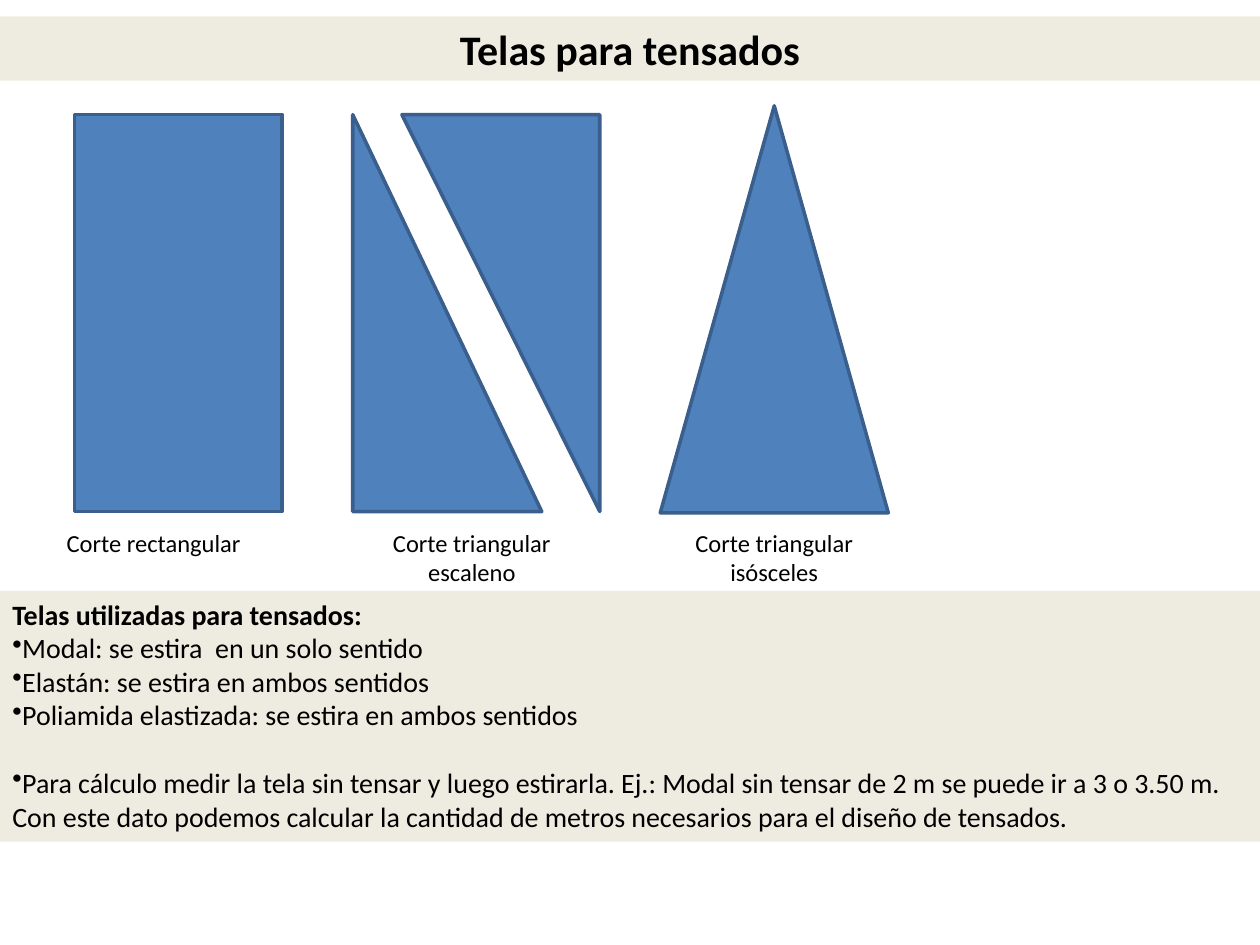
from pptx import Presentation
from pptx.dml.color import RGBColor
from pptx.enum import shapes, text
from pptx.oxml.ns import qn
from pptx.util import Inches, Pt

FONT = "Calibri"
BLUE, OUTLINE, CREAM, BLACK = "4F81BD", "3A5F8C", "EEECE1", "000000"
SHAPE = shapes.MSO_SHAPE
LEFT, CENTER = text.PP_ALIGN.LEFT, text.PP_ALIGN.CENTER


def color(hex_code):
    return RGBColor.from_string(hex_code)


def place(shape, box):
    shape.left, shape.top, shape.width, shape.height = map(Inches, box)


def fill(shape, hex_code):
    shape.fill.solid()
    shape.fill.fore_color.rgb = color(hex_code)


def format_paragraph(paragraph, size, bold=False, align=LEFT):
    paragraph.alignment = align
    for run in paragraph.runs:
        run.font.name = FONT
        run.font.size = Pt(size)
        run.font.bold = bold
        run.font.color.rgb = color(BLACK)


def add_bullet(paragraph):
    bullet = paragraph._p.get_or_add_pPr().makeelement(qn("a:buChar"), {"char": "•"})
    paragraph._p.get_or_add_pPr().append(bullet)


def add_title(slide, box):
    title = slide.shapes.title
    place(title, box)
    fill(title, CREAM)
    frame = title.text_frame
    frame.text = "Telas para tensados"
    frame.auto_size = text.MSO_AUTO_SIZE.NONE
    frame.vertical_anchor = text.MSO_ANCHOR.MIDDLE
    format_paragraph(frame.paragraphs[0], 24, True, CENTER)


def add_cut(slide, kind, box, rotation=0):
    cut = slide.shapes.add_shape(kind, *map(Inches, box))
    cut.rotation = rotation
    cut.shadow.inherit = False
    fill(cut, BLUE)
    cut.line.color.rgb = color(OUTLINE)
    cut.line.width = Pt(2)


def add_label(slide, wording, box, align=CENTER):
    label = slide.shapes.add_textbox(*map(Inches, box))
    label.text_frame.word_wrap = True
    label.text_frame.text = wording
    format_paragraph(label.text_frame.paragraphs[0], 14, align=align)


def add_cuts(slide, top, height, label_top):
    # Fabric pieces, all standing on the same base line
    add_cut(slide, SHAPE.RECTANGLE, (0.59, top, 1.65, height))
    add_cut(slide, SHAPE.RIGHT_TRIANGLE, (2.8, top, 1.5, height))
    add_cut(slide, SHAPE.RIGHT_TRIANGLE, (3.19, top, 1.57, height), 180)
    add_cut(slide, SHAPE.ISOSCELES_TRIANGLE, (5.24, top - 0.07, 1.81, height + 0.08))

    # Captions
    add_label(slide, "Corte rectangular", (0.43, label_top, 1.89, 0.34), LEFT)
    add_label(slide, "Corte triangular escaleno", (2.72, label_top, 2.05, 0.57))
    add_label(slide, "Corte triangular isósceles", (5.16, label_top, 1.97, 0.57))


def add_fabrics(slide, box):
    panel = slide.shapes.add_shape(SHAPE.RECTANGLE, *map(Inches, box))
    panel.shadow.inherit = False
    fill(panel, CREAM)
    panel.line.fill.background()
    frame = panel.text_frame
    frame.word_wrap = True
    frame.vertical_anchor = text.MSO_ANCHOR.TOP

    # Heading
    frame.text = "Telas utilizadas para tensados:"
    format_paragraph(frame.paragraphs[0], 16, True)

    # Bulleted fabrics, then the calculation note set apart by one line
    for item in (
        "Modal: se estira  en un solo sentido",
        "Elastán: se estira en ambos sentidos",
        "Poliamida elastizada: se estira en ambos sentidos",
        "Para cálculo medir la tela sin tensar y luego estirarla. Ej.: Modal sin "
        "tensar de 2 m se puede ir a 3 o 3.50 m. Con este dato podemos calcular la "
        "cantidad de metros necesarios para el diseño de tensados.",
    ):
        paragraph = frame.add_paragraph()
        paragraph.text = item
        add_bullet(paragraph)
        format_paragraph(paragraph, 16)
    paragraph.space_before = Pt(19.5)


def main():
    presentation = Presentation()
    presentation.slide_width, presentation.slide_height = Inches(10), Inches(7.5)
    slide = presentation.slides.add_slide(presentation.slide_layouts[5])
    add_title(slide, (0, 0.13, 10, 0.51))
    add_cuts(slide, top=0.91, height=3.15, label_top=4.14)
    add_fabrics(slide, (0, 4.69, 10, 1.99))
    presentation.save("out.pptx")


if __name__ == "__main__":
    main()
